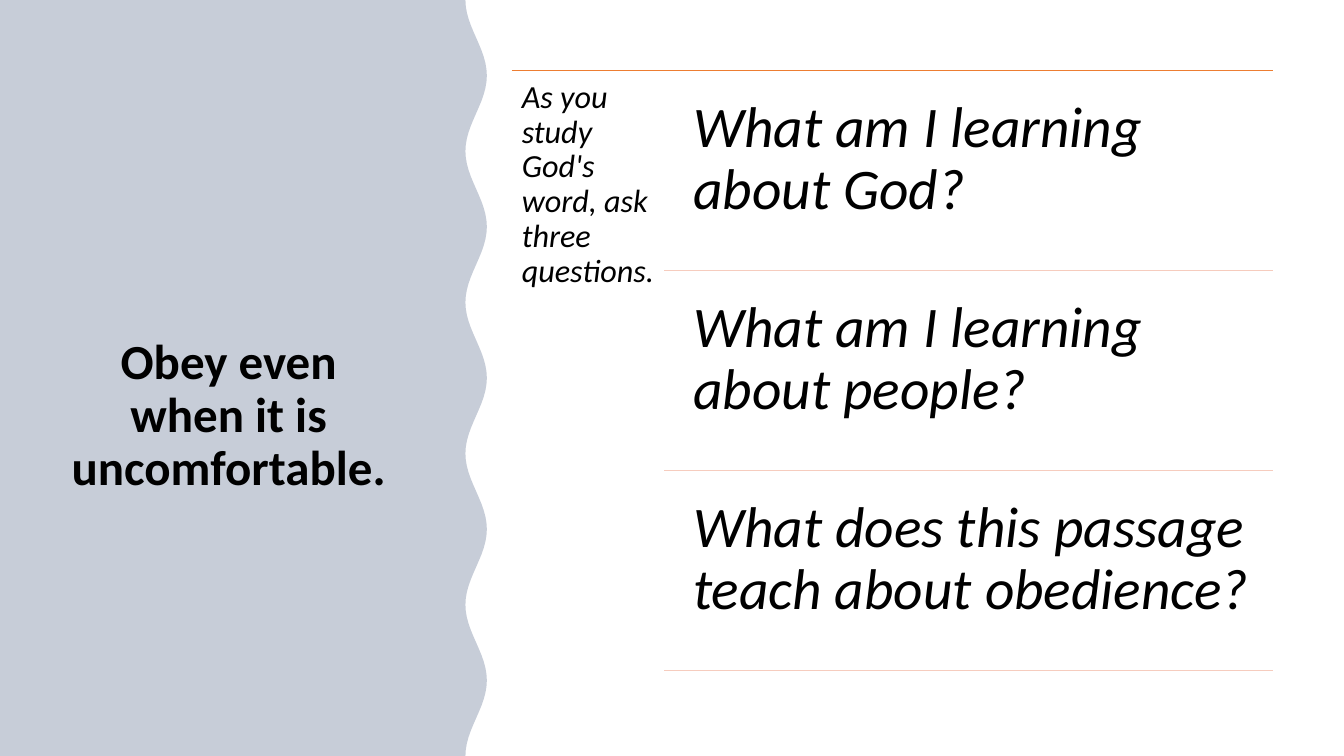
from dataclasses import dataclass
from math import cos, pi

from lxml import etree
from pptx import Presentation
from pptx.dml.color import RGBColor
from pptx.enum.shapes import MSO_CONNECTOR
from pptx.enum.text import MSO_ANCHOR, PP_ALIGN
from pptx.oxml.ns import qn
from pptx.util import Cm, Pt

STRAIGHT = MSO_CONNECTOR.STRAIGHT
TOP, BOTTOM = MSO_ANCHOR.TOP, MSO_ANCHOR.BOTTOM
LEFT, CENTER = PP_ALIGN.LEFT, PP_ALIGN.CENTER

PAGE_WIDTH, PAGE_HEIGHT = 33.87, 19.05
WAVE_COUNT, WAVE_STEPS = 5, 120
WAVE_MIDDLE, WAVE_SWING = 12.0, 0.27
LIST_LEFT, LIST_RIGHT, LIST_TOP = 12.9, 32.08, 1.78
QUESTION_LEFT, RULE_LEFT = 17.04, 16.74
ROW_HEIGHT, ROW_GAP = 5.04, 0.25
QUESTIONS = (
    "What am I learning about God?",
    "What am I learning about people?",
    "What does this passage teach about obedience?",
)


@dataclass(frozen=True)
class Theme:
    font: str = "Calibri"
    text: str = "000000"
    panel: str = "203864"
    panel_opacity: int = 25
    top_rule: str = "ED7D31"
    row_rule: str = "F6CCBE"
    title_size: int = 35
    intro_size: int = 23
    question_size: int = 41
    rule_width: int = 1
    line_spacing: float = 0.9


class SlideBuilder:
    def __init__(self, page, theme):
        self.page = page
        self.theme = theme

    def panel(self, points):
        corners = [(Cm(x), Cm(y)) for x, y in points]
        outline = self.page.shapes.build_freeform(*corners[0])
        outline.add_line_segments(corners[1:], close=True)
        shape = outline.convert_to_shape()
        shape.shadow.inherit = False
        shape.line.fill.background()
        shape.fill.solid()
        shape.fill.fore_color.rgb = RGBColor.from_string(self.theme.panel)
        color = shape.fill._xPr.find(qn("a:solidFill"))[0]
        alpha = etree.SubElement(color, qn("a:alpha"))
        alpha.set("val", str(self.theme.panel_opacity * 1000))

    def rule(self, left, right, y, color):
        line = self.page.shapes.add_connector(
            STRAIGHT, Cm(left), Cm(y), Cm(right), Cm(y))
        line.line.color.rgb = RGBColor.from_string(color)
        line.line.width = Pt(self.theme.rule_width)
        etree.SubElement(line._element.spPr, qn("a:effectLst"))

    def text(self, words, area, size, insets, anchor=TOP, align=LEFT,
             bold=False, italic=False):
        box = self.page.shapes.add_textbox(*map(Cm, area))
        frame = box.text_frame
        frame.word_wrap = True
        frame.vertical_anchor = anchor
        frame.margin_left, frame.margin_top, frame.margin_right, frame.margin_bottom = map(Cm, insets)
        para = frame.paragraphs[0]
        para.alignment = align
        para.line_spacing = self.theme.line_spacing
        span = para.add_run()
        span.text = words
        span.font.name = self.theme.font
        span.font.size = Pt(size)
        span.font.bold = bold
        span.font.italic = italic
        span.font.color.rgb = RGBColor.from_string(self.theme.text)


def wavy_edge():
    for step in range(WAVE_STEPS + 1):
        share = step / WAVE_STEPS
        yield WAVE_MIDDLE - WAVE_SWING * cos(2 * pi * WAVE_COUNT * share), PAGE_HEIGHT * share


def main():
    deck = Presentation()
    deck.slide_width, deck.slide_height = Cm(PAGE_WIDTH), Cm(PAGE_HEIGHT)
    page = deck.slides.add_slide(deck.slide_layouts[6])
    theme = Theme()
    builder = SlideBuilder(page, theme)

    builder.panel([(0, 0), *wavy_edge(), (0, PAGE_HEIGHT)])
    builder.text("Obey even when it is uncomfortable.", (1.27, 2.01, 8.99, 10.62),
                 theme.title_size, (0.25, 0.13, 0.25, 0.13), BOTTOM, CENTER, bold=True)

    builder.rule(LIST_LEFT, LIST_RIGHT, LIST_TOP, theme.top_rule)
    builder.text("As you study God's word, ask three questions.",
                 (LIST_LEFT, LIST_TOP, 3.84, 15.37),
                 theme.intro_size, (0.25, 0.25, 0.15, 0.25), italic=True)

    for row, question in enumerate(QUESTIONS):
        top = LIST_TOP + row * ROW_HEIGHT
        area = (QUESTION_LEFT, top + ROW_GAP, LIST_RIGHT - QUESTION_LEFT, ROW_HEIGHT - ROW_GAP)
        builder.text(question, area, theme.question_size, (0.43,) * 4, italic=True)
        builder.rule(RULE_LEFT, LIST_RIGHT, top + ROW_HEIGHT, theme.row_rule)

    deck.save("out.pptx")


if __name__ == "__main__":
    main()
